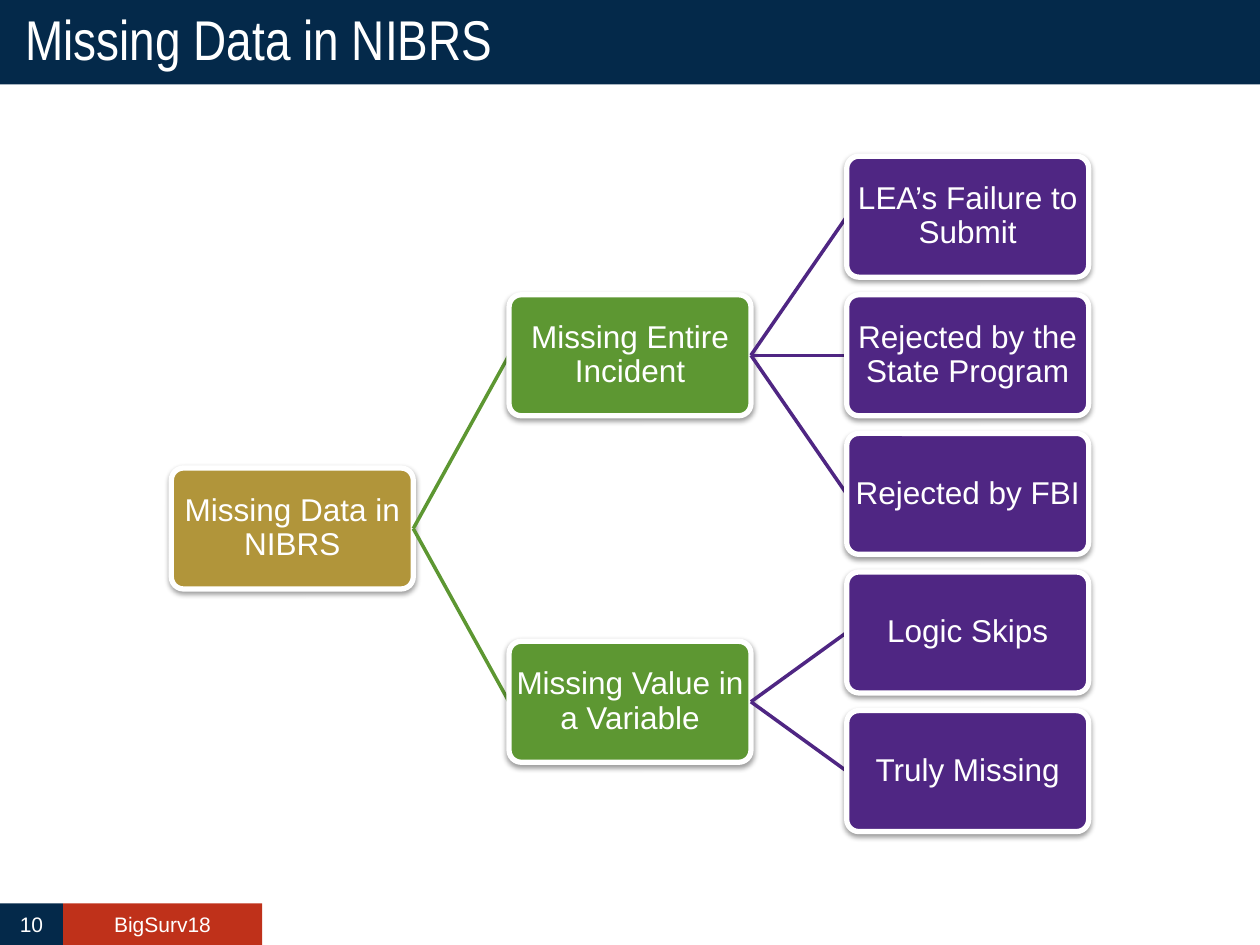
from dataclasses import dataclass

import lxml.etree
import pptx
import pptx.dml.color
import pptx.enum.shapes
import pptx.enum.text
import pptx.oxml
import pptx.oxml.ns
import pptx.util

RGBColor = pptx.dml.color.RGBColor
Inches = pptx.util.Inches
Align = pptx.enum.text.PP_ALIGN
Shape = pptx.enum.shapes.MSO_SHAPE

NAVY = RGBColor(0x04, 0x29, 0x4A)
RED = RGBColor(0xBF, 0x31, 0x1A)
GOLD = RGBColor(0xB1, 0x95, 0x3A)
GREEN = RGBColor(0x5D, 0x97, 0x32)
PURPLE = RGBColor(0x4F, 0x26, 0x83)
WHITE = RGBColor(0xFF, 0xFF, 0xFF)
LEVEL_COLORS = [GOLD, GREEN, PURPLE]

# Grid of the tree, in inches
LEFT, TOP = 1.36, 1.24
COL, ROW = 2.68, 1.1
BOX_W, BOX_H = 1.92, 0.96

# Footer strip, in inches
FOOT_TOP, FOOT_H = 7.17, 0.33

SHADOW = (
    f'<a:effectLst {pptx.oxml.ns.nsdecls("a")}>'
    '<a:outerShdw blurRad="39400" dist="20300" dir="5400000" rotWithShape="0">'
    '<a:srgbClr val="000000"><a:alpha val="38000"/></a:srgbClr>'
    '</a:outerShdw></a:effectLst>'
)


@dataclass
class Node:
    text: str
    row: float
    children: tuple = ()


TREE = Node("Missing Data in NIBRS", 2.25, (
    Node("Missing Entire Incident", 1, (
        Node("LEA’s Failure to Submit", 0),
        Node("Rejected by the State Program", 1),
        Node("Rejected by FBI", 2),
    )),
    Node("Missing Value in a Variable", 3.5, (
        Node("Logic Skips", 3),
        Node("Truly Missing", 4),
    )),
))


def write(s, text: str, size: float, font: str = "Arial", align=Align.CENTER,
          spacing: float = 1.0, inset: tuple = (0.1, 0.05)) -> None:
    """Put one formatted, vertically centred paragraph in a shape."""
    tf = s.text_frame
    x, y = (Inches(v) for v in inset)
    frame = {"word_wrap": True, "auto_size": pptx.enum.text.MSO_AUTO_SIZE.NONE,
             "vertical_anchor": pptx.enum.text.MSO_ANCHOR.MIDDLE,
             "margin_left": x, "margin_right": x,
             "margin_top": y, "margin_bottom": y}
    for name, value in frame.items():
        setattr(tf, name, value)
    p = tf.paragraphs[0]
    p.alignment, p.line_spacing = align, spacing
    r = p.add_run()
    r.text = text
    for name, value in {"size": pptx.util.Pt(size), "name": font}.items():
        setattr(r.font, name, value)
    r.font.color.rgb = WHITE


def fill(s, color: RGBColor) -> None:
    s.fill.solid()
    s.fill.fore_color.rgb = color


def add_box(shapes, node: Node, level: int):
    """Draw a rounded tree box with a white rim and a soft shadow."""
    s = shapes.add_shape(Shape.ROUNDED_RECTANGLE,
                         Inches(LEFT + level * COL), Inches(TOP + node.row * ROW),
                         Inches(BOX_W), Inches(BOX_H))
    s.adjustments[0] = 0.1
    fill(s, LEVEL_COLORS[level])
    s.line.color.rgb = WHITE
    s.line.width = pptx.util.Pt(3)
    s._element.spPr.append(pptx.oxml.parse_xml(SHADOW))
    write(s, node.text, 18, spacing=0.9, inset=(0.01, 0.01))
    return s


def add_link(shapes, parent, color: RGBColor):
    """Start a plain line at the right side of the parent box."""
    line = shapes.add_connector(pptx.enum.shapes.MSO_CONNECTOR.STRAIGHT, 0, 0, 0, 0)
    line.begin_connect(parent, 3)
    line.line.color.rgb = color
    line.line.width = pptx.util.Pt(2)
    lxml.etree.SubElement(line._element.spPr, pptx.oxml.ns.qn("a:effectLst"))
    return line


def add_tree(shapes, node: Node, level: int = 0):
    """Draw a box, then each child's link behind the child's box."""
    s = add_box(shapes, node, level)
    for child in node.children:
        line = add_link(shapes, s, LEVEL_COLORS[level + 1])
        line.end_connect(add_tree(shapes, child, level + 1), 1)
    return s


def add_footer(shapes, text: str, left: float, width: float, color: RGBColor) -> None:
    s = shapes.add_shape(Shape.RECTANGLE, Inches(left), Inches(FOOT_TOP),
                         Inches(width), Inches(FOOT_H))
    s.shadow.inherit = False
    fill(s, color)
    s.line.fill.background()
    write(s, text, 12)


def main() -> None:
    prs = pptx.Presentation()
    prs.slide_width, prs.slide_height = Inches(10), Inches(7.5)
    slide = prs.slides.add_slide(prs.slide_layouts[5])

    # Title bar
    title = slide.shapes.title
    bar = {"left": 0, "top": 0, "width": prs.slide_width, "height": Inches(0.67)}
    for name, value in bar.items():
        setattr(title, name, value)
    fill(title, NAVY)
    write(title, "Missing Data in NIBRS", 32, "Arial Narrow", Align.LEFT, 0.9, (0.2, 0.1))

    # Tree of missing data
    add_tree(slide.shapes, TREE)

    # Footer
    add_footer(slide.shapes, "10", 0, 0.5, NAVY)
    add_footer(slide.shapes, "BigSurv18", 0.5, 1.58, RED)

    prs.save("out.pptx")


if __name__ == "__main__":
    main()
